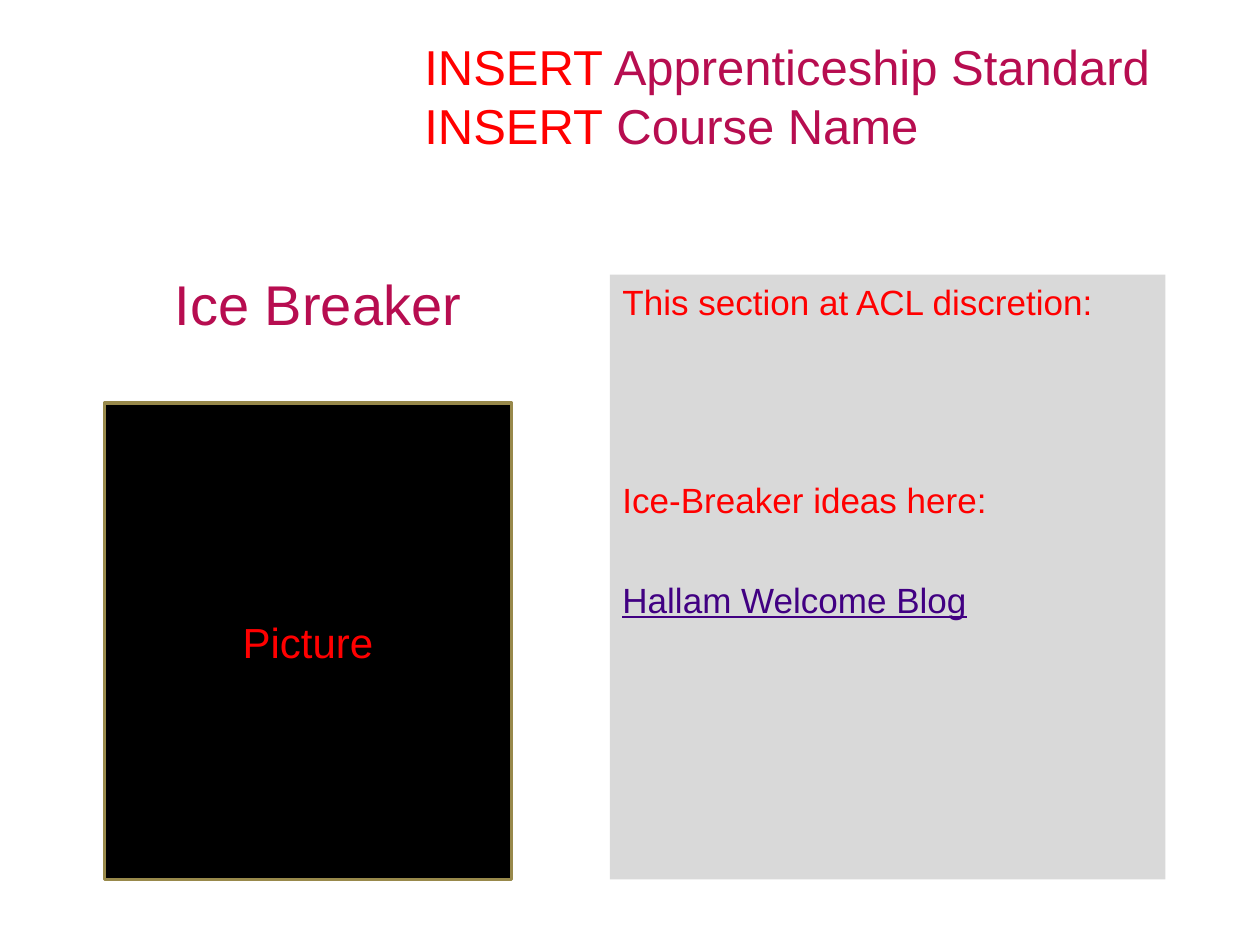
import pptx
import pptx.dml.color
import pptx.enum.dml
import pptx.enum.shapes
import pptx.enum.text
import pptx.util
import lxml.etree
from pptx.util import Inches

RED = "FF0000"
CRIMSON = "B70D50"
PURPLE = "410082"
ALIGN = pptx.enum.text.PP_ALIGN
ANCHOR = pptx.enum.text.MSO_ANCHOR


def colour(hex_string):
    return pptx.dml.color.RGBColor.from_string(hex_string)


def place(part, box):
    part.left, part.top, part.width, part.height = map(Inches, box)


def prepare(part, anchor):
    frame = part.text_frame
    frame.word_wrap = True
    frame.auto_size = pptx.enum.text.MSO_AUTO_SIZE.NONE
    frame.vertical_anchor = anchor
    return frame


def write(paragraph, words, size, ink, underline=None):
    run = paragraph.add_run()
    run.text = words
    run.font.name = "Arial"
    run.font.size = pptx.util.Pt(size)
    run.font.color.rgb = colour(ink)
    run.font.underline = underline


def add_section_title(slide, box):
    section = slide.shapes.title
    place(section, box)
    paragraph = prepare(section, ANCHOR.MIDDLE).paragraphs[0]
    paragraph.alignment = ALIGN.CENTER
    write(paragraph, "Ice Breaker", 32, CRIMSON)


def add_ideas(slide, box):
    ideas = slide.placeholders[1]
    place(ideas, box)
    ideas.fill.solid()
    ideas.fill.fore_color.rgb = colour("D9D9D9")
    frame = prepare(ideas, ANCHOR.TOP)
    lines = [
        ("This section at ACL discretion:", 0, RED, None),
        ("Ice-Breaker ideas here:", 89, RED, None),
        ("Hallam Welcome Blog", 33, PURPLE, True),
    ]
    for index, (words, gap, ink, underline) in enumerate(lines):
        paragraph = frame.add_paragraph() if index else frame.paragraphs[0]
        properties = paragraph._p.get_or_add_pPr()
        properties.set("marL", "0")
        properties.set("indent", "0")
        lxml.etree.SubElement(properties, pptx.oxml.ns.qn("a:buNone"))
        paragraph.space_before = pptx.util.Pt(gap)
        write(paragraph, words, 20, ink, underline)


def add_course_heading(slide, box):
    heading = slide.shapes.add_textbox(*map(Inches, box))
    frame = prepare(heading, ANCHOR.MIDDLE)
    for index, subject in enumerate(["Apprenticeship Standard", "Course Name"]):
        paragraph = frame.add_paragraph() if index else frame.paragraphs[0]
        write(paragraph, "INSERT", 28, RED)
        write(paragraph, " " + subject, 28, CRIMSON)


def add_picture_panel(slide, box):
    panel = slide.shapes.add_shape(
        pptx.enum.shapes.MSO_SHAPE.RECTANGLE, *map(Inches, box))
    panel.shadow.inherit = False
    panel.fill.solid()
    panel.fill.fore_color.rgb = colour("000000")
    panel.line.color.rgb = colour("98894B")
    panel.line.width = pptx.util.Pt(2)
    paragraph = prepare(panel, ANCHOR.MIDDLE).paragraphs[0]
    paragraph.alignment = ALIGN.CENTER
    write(paragraph, "Picture", 24, RED)


def main():
    deck = pptx.Presentation()
    deck.slide_width, deck.slide_height = Inches(10), Inches(7.5)
    slide = deck.slides.add_slide(deck.slide_layouts[1])
    add_section_title(slide, (0.2, 1.78, 4.65, 1.25))
    add_ideas(slide, (4.84, 2.18, 4.41, 4.8))
    add_course_heading(slide, (3.27, 0.13, 7.56, 1.25))
    add_picture_panel(slide, (0.83, 3.2, 3.23, 3.78))
    deck.save("out.pptx")


if __name__ == "__main__":
    main()
